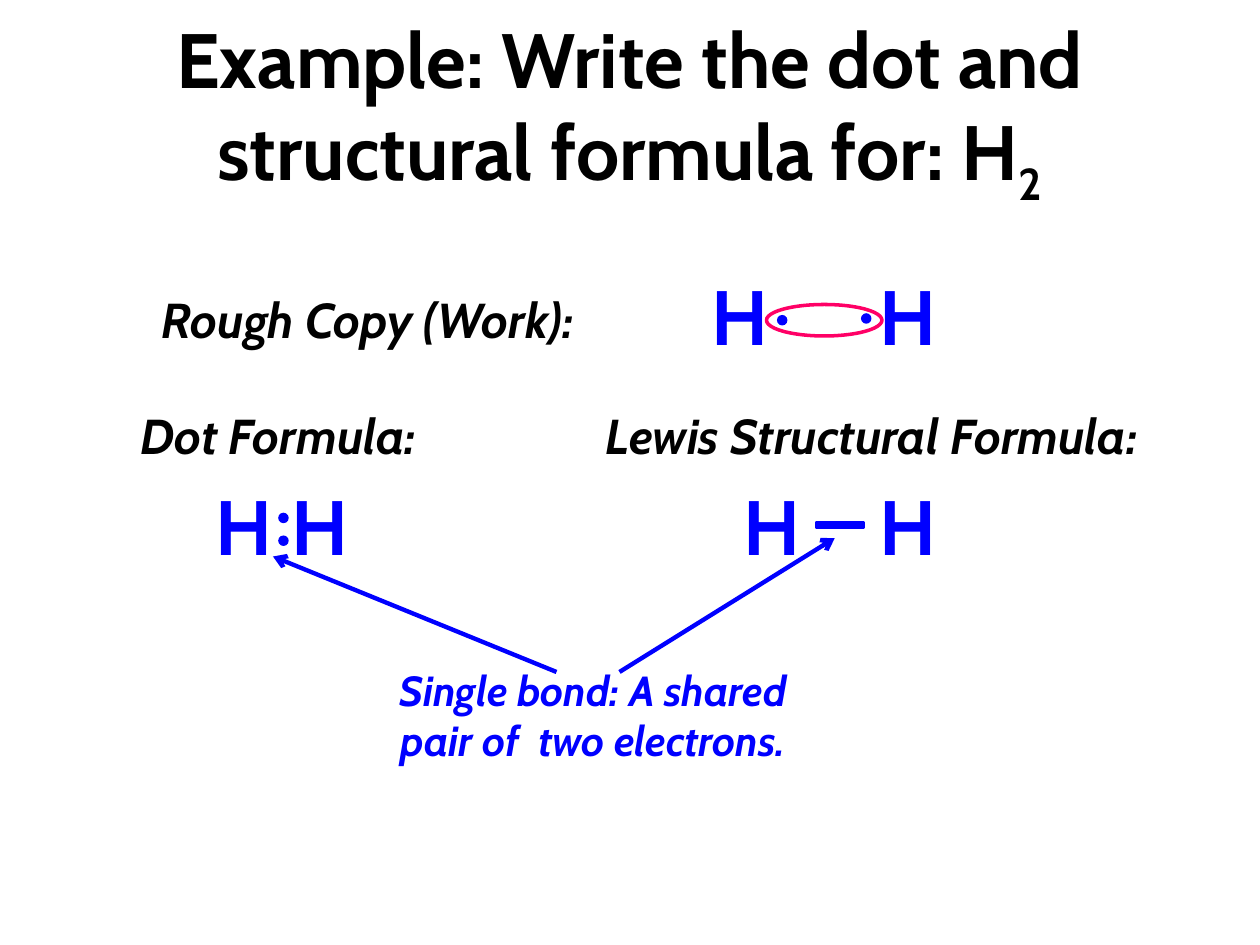
from lxml.etree import SubElement
from pptx import Presentation
from pptx.dml.color import RGBColor
from pptx.enum.shapes import MSO_CONNECTOR, MSO_SHAPE
from pptx.enum.text import MSO_ANCHOR, MSO_AUTO_SIZE, PP_ALIGN
from pptx.oxml.ns import qn
from pptx.util import Pt

COLORS = {"black": "000000", "blue": "0000FF", "pink": "FF0066"}
FORMATS = {
    "title": {"size": Pt(44), "bold": True},
    "symbol": {"size": Pt(44), "bold": True},
    "label": {"size": Pt(28), "bold": True, "italic": True},
    "note": {"size": Pt(24), "bold": True, "italic": True},
}


def add_text(parent, text, style, color, left, top, width, height):
    box = parent.shapes.add_textbox(Pt(left), Pt(top), Pt(width), Pt(height))
    box.text_frame.word_wrap = True
    box.text_frame.auto_size = MSO_AUTO_SIZE.SHAPE_TO_FIT_TEXT
    para = box.text_frame.paragraphs[0]
    para.alignment = PP_ALIGN.CENTER
    para.font.name = "Cabin"
    para.font.color.rgb = RGBColor.from_string(COLORS[color])
    span = para.add_run()
    span.text = text
    span.font.name = "Cabin"
    span.font.color.rgb = RGBColor.from_string(COLORS[color])
    for name, value in FORMATS[style].items():
        setattr(span.font, name, value)
    return box


def add_mark(parent, kind, left, top, width, height, fill=None, line=None):
    mark = parent.shapes.add_shape(kind, Pt(left), Pt(top), Pt(width), Pt(height))
    mark.shadow.inherit = False
    for part, color in ((mark.fill, fill), (mark.line.fill, line)):
        if color:
            part.solid()
            part.fore_color.rgb = RGBColor.from_string(COLORS[color])
        else:
            part.background()
    if line:
        mark.line.width = Pt(2)


deck = Presentation()
deck.slide_width, deck.slide_height = Pt(720), Pt(540)
page = deck.slides.add_slide(deck.slide_layouts[6])

# Title with subscript
title = add_text(page, "Example: Write the dot and structural formula for: H",
                 "title", "black", 36, 18, 648, 90)
title.text_frame.auto_size = MSO_AUTO_SIZE.NONE
title.text_frame.vertical_anchor = MSO_ANCHOR.MIDDLE
subscript = title.text_frame.paragraphs[0].add_run()
subscript.text = "2"
subscript.font.name = "Cabin"
subscript.font.color.rgb = RGBColor.from_string(COLORS["black"])
for name, value in FORMATS["title"].items():
    setattr(subscript.font, name, value)
subscript._r.get_or_add_rPr().set("baseline", "-25000")

# Section labels
for text, left, top, width in (
    ("Rough Copy (Work):", 60, 162, 300),
    ("Dot Formula:", 42, 228, 234),
    ("Lewis Structural Formula:", 318, 228, 360),
):
    add_text(page, text, "label", "black", left, top, width, 41)

# Hydrogen atoms and electrons of the three formulas
dot_formula = page.shapes.add_group_shape()
lewis_formula = page.shapes.add_group_shape()
for parent, top, atoms, electrons in (
    (page, 150, (390, 486), ((444, 180), (492, 179))),
    (dot_formula, 270, (106.5, 150), ((159, 293), (159, 306))),
    (lewis_formula, 270, (408, 486), ()),
):
    for left in atoms:
        add_text(parent, "H", "symbol", "blue", left, top, 66, 60.5)
    for left, dot_top in electrons:
        add_mark(parent, MSO_SHAPE.OVAL, left, dot_top, 6, 6, fill="blue")

# Shared pair ring and bond line
add_mark(page, MSO_SHAPE.OVAL, 438, 174, 66, 18, line="pink")
add_mark(lewis_formula, MSO_SHAPE.MATH_MINUS, 462, 294, 36, 12, fill="blue", line="blue")

# Single bond note with arrows
bond_note = page.shapes.add_group_shape()
for x1, y1, x2, y2 in ((354, 384, 477, 307.5), (318, 384, 156, 318)):
    arrow = bond_note.shapes.add_connector(
        MSO_CONNECTOR.STRAIGHT, Pt(x1), Pt(y1), Pt(x2), Pt(y2))
    arrow.line.color.rgb = RGBColor.from_string(COLORS["blue"])
    arrow.line.width = Pt(2.5)
    SubElement(arrow.line._get_or_add_ln(), qn("a:tailEnd"), type="arrow")
    SubElement(arrow._element.spPr, qn("a:effectLst"))
add_text(bond_note, "Single bond: A shared pair of  two electrons.",
         "note", "blue", 198, 376, 282, 65.5)

deck.save("out.pptx")
